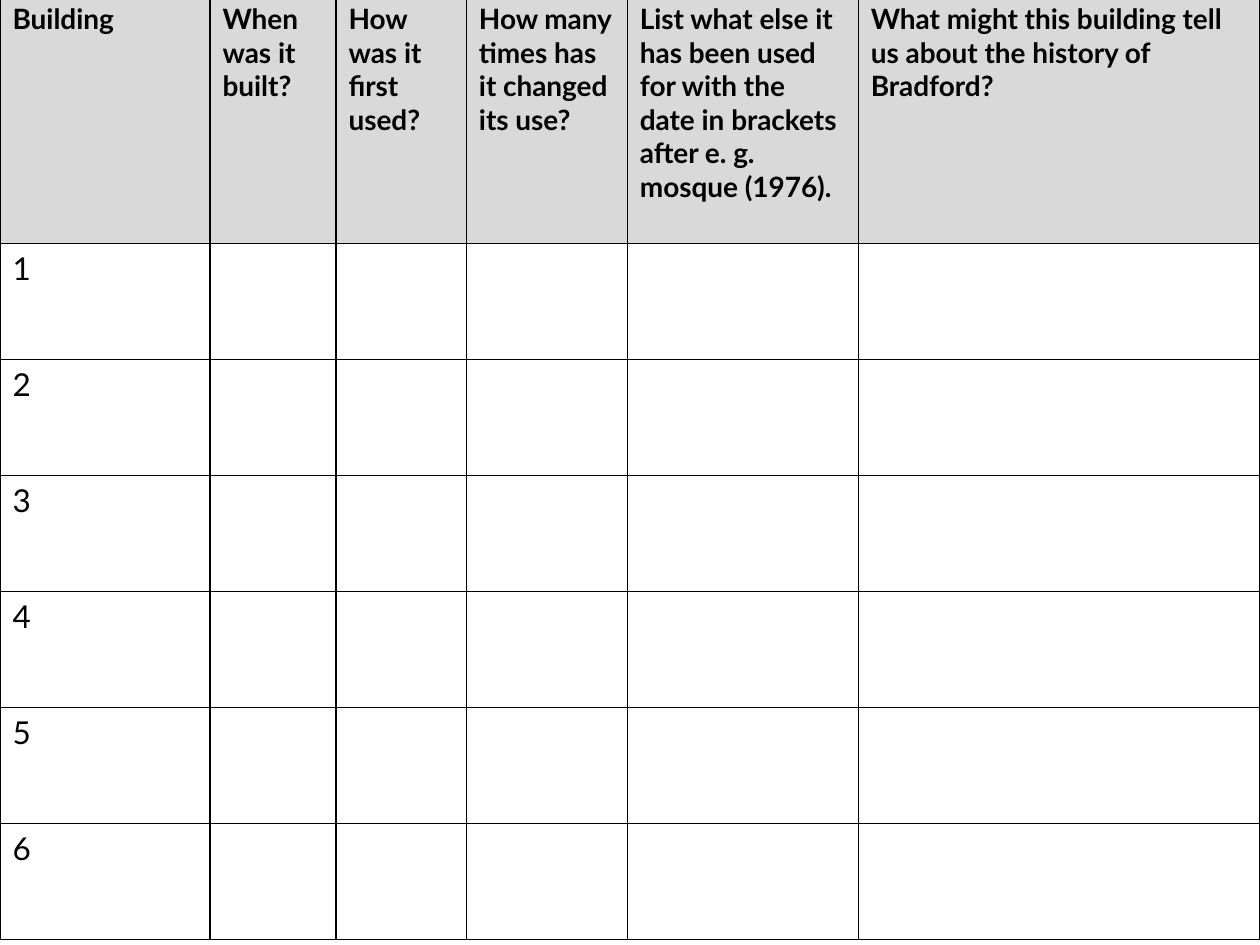
from dataclasses import dataclass

from lxml import etree
from pptx import Presentation
from pptx.dml import color
from pptx.oxml import ns
from pptx.util import Pt


@dataclass(frozen=True)
class Theme:
    font: str = "Lato"
    ink: str = "000000"
    header_fill: str = "D9D9D9"
    body_fill: str = "FFFFFF"
    header_size: int = 16
    body_size: int = 18
    border: int = 1


THEME = Theme()
HEADINGS = [
    "Building",
    "When was it built?",
    "How was it first used?",
    "How many times has it changed its use?",
    "List what else it has been used for with the date in brackets after e. g. mosque (1976).",
    "What might this building tell us about the history of Bradford?",
]
COLUMN_SHARES = [120, 72, 74.5, 92, 132, 229.5]
BUILDING_COUNT = 6
HEADER_HEIGHT = 141.3


def add_borders(cell):
    properties = cell._tc.get_or_add_tcPr()
    for position, side in enumerate(("lnL", "lnR", "lnT", "lnB")):
        line = etree.Element(ns.qn(f"a:{side}"), w=str(Pt(THEME.border)))
        fill = etree.SubElement(line, ns.qn("a:solidFill"))
        etree.SubElement(fill, ns.qn("a:srgbClr"), val=THEME.ink)
        properties.insert(position, line)


def style_cell(cell, text, is_header):
    cell.fill.solid()
    fill = THEME.header_fill if is_header else THEME.body_fill
    cell.fill.fore_color.rgb = color.RGBColor.from_string(fill)
    add_borders(cell)
    cell.text_frame.text = text
    for paragraph in cell.text_frame.paragraphs:
        for run in paragraph.runs:
            run.font.name = THEME.font
            run.font.size = Pt(THEME.header_size if is_header else THEME.body_size)
            run.font.bold = is_header
            run.font.color.rgb = color.RGBColor.from_string(THEME.ink)


def add_building_table(slide, left, top, width, height):
    rows = [HEADINGS]
    for number in range(1, BUILDING_COUNT + 1):
        rows.append([str(number)] + [""] * (len(HEADINGS) - 1))
    table = slide.shapes.add_table(
        len(rows), len(HEADINGS), Pt(left), Pt(top), Pt(width), Pt(height)
    ).table
    table.horz_banding = False
    for column, share in zip(table.columns, COLUMN_SHARES):
        column.width = Pt(width * share / sum(COLUMN_SHARES))
    body_height = (height - HEADER_HEIGHT) / BUILDING_COUNT
    for index, texts in enumerate(rows):
        is_header = index == 0
        table.rows[index].height = Pt(HEADER_HEIGHT if is_header else body_height)
        for cell, text in zip(table.rows[index].cells, texts):
            style_cell(cell, text, is_header)


def main():
    presentation = Presentation()
    presentation.slide_width = Pt(720)
    presentation.slide_height = Pt(540)
    slide = presentation.slides.add_slide(presentation.slide_layouts[6])
    add_building_table(slide, 0, -2.2, 720, 539.1)
    presentation.save("out.pptx")


if __name__ == "__main__":
    main()
